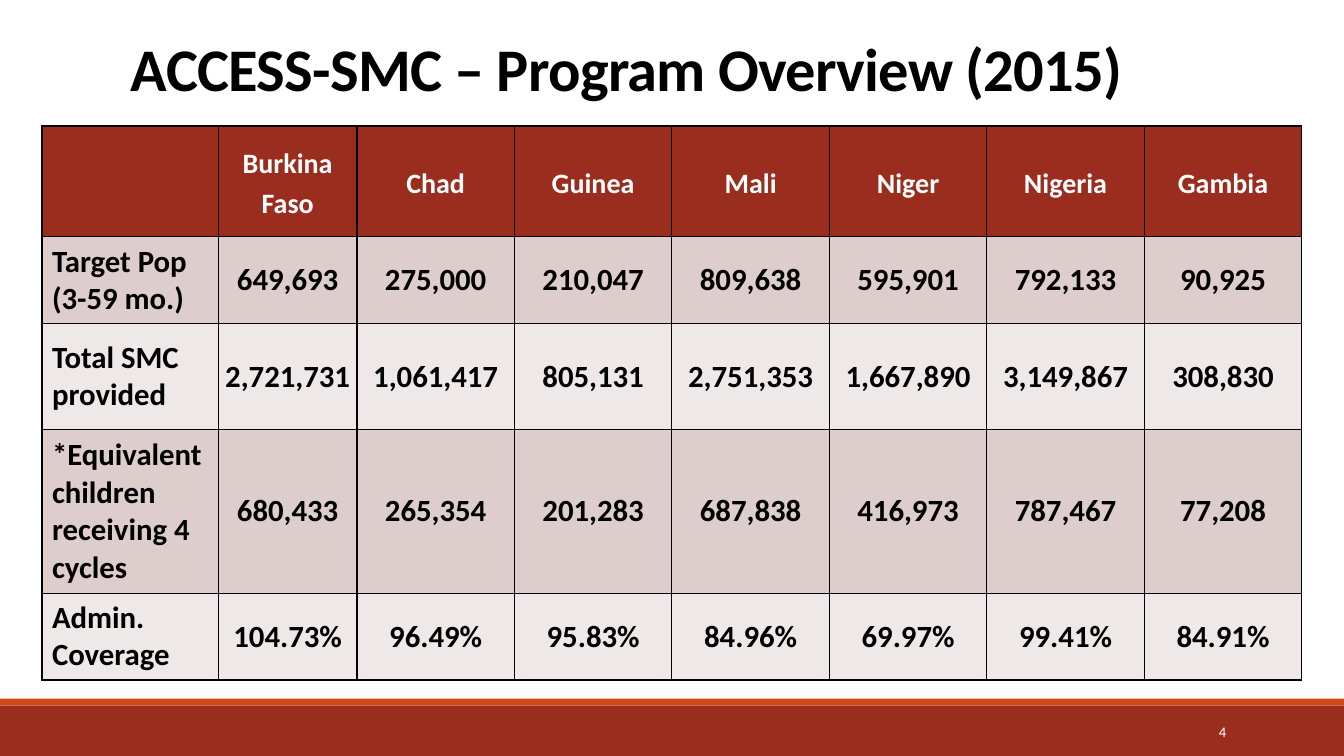
from pptx import Presentation
from pptx.util import Pt
from pptx.dml.color import RGBColor as RGB
from pptx.enum.shapes import MSO_SHAPE as SHAPE
from pptx.enum.text import MSO_ANCHOR as ANCHOR, PP_ALIGN as ALIGN
from pptx.oxml import parse_xml
from pptx.oxml.ns import nsdecls

HEX = {"rust": "9B2D1F", "orange": "D34817", "dark": "DECDCD",
       "light": "EFE8E8", "black": "000000", "white": "FFFFFF"}
FONT = "Calibri"
HEAD = ["", "Burkina Faso", "Chad", "Guinea", "Mali", "Niger", "Nigeria", "Gambia"]
ROWS = [
    ["Target Pop\n(3-59 mo.)", "649,693", "275,000", "210,047", "809,638",
     "595,901", "792,133", "90,925"],
    ["Total SMC provided", "2,721,731", "1,061,417", "805,131", "2,751,353",
     "1,667,890", "3,149,867", "308,830"],
    ["*Equivalent children receiving 4 cycles", "680,433", "265,354", "201,283",
     "687,838", "416,973", "787,467", "77,208"],
    ["Admin.\nCoverage", "104.73%", "96.49%", "95.83%", "84.96%", "69.97%",
     "99.41%", "84.91%"],
]
HEIGHTS = [79.2, 62, 75.6, 117, 62]
LABEL, FIRST = 126, 99


def color(name):
    return RGB.from_string(HEX[name])


def style(frame, size, tint, bold=True, align=ALIGN.LEFT, space=None):
    for para in frame.paragraphs:
        para.alignment = align
        para.line_spacing = space
        font = para.font
        font.name, font.size, font.bold = FONT, Pt(size), bold
        font.color.rgb = color(tint)


def add_text(slide, box, text, anchor):
    frame = slide.shapes.add_textbox(*map(Pt, box)).text_frame
    frame.word_wrap = True
    frame.vertical_anchor = anchor
    frame.text = text
    return frame


def add_title(slide, box):
    frame = add_text(slide, box, "ACCESS-SMC – Program Overview (2015)", ANCHOR.BOTTOM)
    style(frame, 43.2, "black", space=0.85)
    frame.paragraphs[0].runs[0].font._element.set("spc", "-50")


def add_edges(cell):
    props = cell._tc.get_or_add_tcPr()
    for side in "LRTB":
        props.append(parse_xml(
            f'<a:ln{side} {nsdecls("a")} w="12700"><a:solidFill>'
            f'<a:srgbClr val="{HEX["black"]}"/></a:solidFill></a:ln{side}>'))


def fill_cell(cell, text, row, col):
    add_edges(cell)
    cell.fill.solid()
    cell.fill.fore_color.rgb = color("rust" if row == 0 else "dark" if row % 2 else "light")
    cell.vertical_anchor = ANCHOR.MIDDLE
    cell.text = text
    if col:
        cell.margin_top = cell.margin_bottom = 0
        cell.margin_left = cell.margin_right = Pt(0 if row else 3)
    if row:
        style(cell.text_frame, 22, "black", align=ALIGN.CENTER if col else ALIGN.LEFT)
    else:
        style(cell.text_frame, 20, "white", align=ALIGN.CENTER, space=1.15)


def add_grid(slide, box):
    data = [HEAD] + ROWS
    grid = slide.shapes.add_table(len(data), len(HEAD), *map(Pt, box)).table
    rest = (box[2] - LABEL - FIRST) / (len(HEAD) - 2)
    for col, wide in zip(grid.columns, [LABEL, FIRST] + [rest] * (len(HEAD) - 2)):
        col.width = Pt(wide)
    for line, tall in zip(grid.rows, HEIGHTS):
        line.height = Pt(tall)
    for row, texts in enumerate(data):
        for col, text in enumerate(texts):
            fill_cell(grid.cell(row, col), text, row, col)


def add_bar(slide, box, tint):
    bar = slide.shapes.add_shape(SHAPE.RECTANGLE, *map(Pt, box))
    bar.shadow.inherit = False
    bar.fill.solid()
    bar.fill.fore_color.rgb = color(tint)
    bar.line.fill.background()


def add_foot(slide, box):
    left, top, wide, tall = box
    strip = 5
    add_bar(slide, (left, top + strip, wide, tall - strip), "rust")
    add_bar(slide, (left, top, wide, strip), "orange")
    page = add_text(slide, (left + 780, top + 9.3, 103, 28.8), "4", ANCHOR.MIDDLE)
    style(page, 10.5, "white", bold=False, align=ALIGN.RIGHT)


def main():
    deck = Presentation()
    deck.slide_width, deck.slide_height = Pt(960), Pt(540)
    slide = deck.slides.add_slide(deck.slide_layouts[6])
    add_foot(slide, (0, 499, 960, 41))
    add_title(slide, (86.4, 22.3, 792, 55.4))
    add_grid(slide, (30, 90, 900, sum(HEIGHTS)))
    deck.save("out.pptx")


if __name__ == "__main__":
    main()
